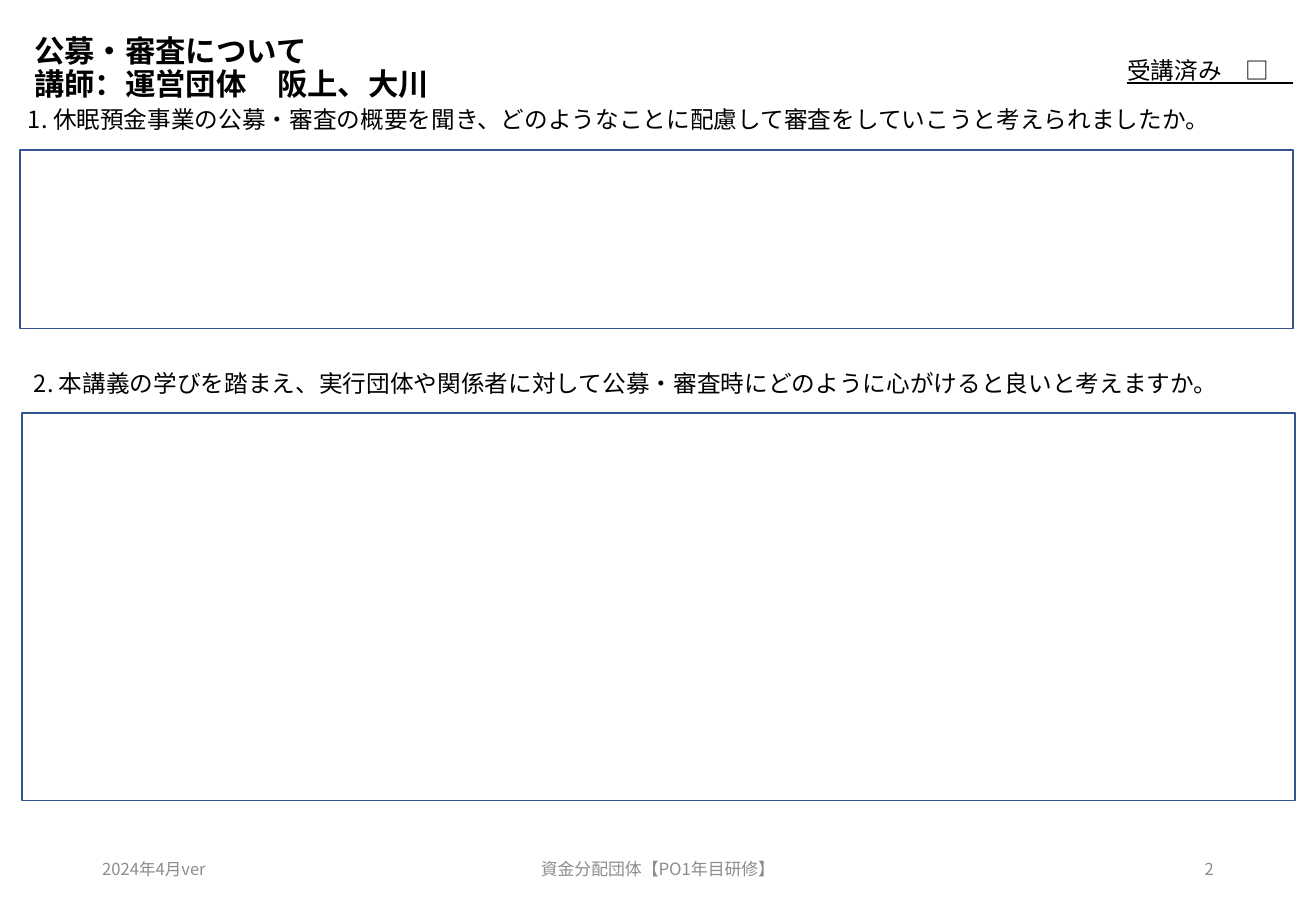
from dataclasses import dataclass

from pptx import Presentation
from pptx.dml.color import RGBColor
from pptx.enum.shapes import MSO_SHAPE
from pptx.enum.text import MSO_ANCHOR, MSO_AUTO_SIZE, PP_ALIGN
from pptx.oxml.ns import qn
from pptx.util import Pt


@dataclass(frozen=True)
class Theme:
    font: str = "Noto Sans CJK JP"
    ink: RGBColor = RGBColor(0x00, 0x00, 0x00)
    muted: RGBColor = RGBColor(0x8C, 0x8C, 0x8C)
    paper: RGBColor = RGBColor(0xFF, 0xFF, 0xFF)
    outline: RGBColor = RGBColor(0x32, 0x54, 0x91)
    title_size: float = 18
    body_size: float = 14
    footer_size: float = 10
    footer_side_size: float = 9.8


THEME = Theme()


def add_span(para, text, size, color=THEME.ink, bold=False, underline=False):
    span = para.add_run()
    span.text = text
    font = span.font
    font.name, font.size, font.bold = THEME.font, Pt(size), bold
    font.underline = underline
    font.color.rgb = color
    # East Asian characters take their own typeface entry
    latin = font._element.find(qn("a:latin"))
    east_asian = latin.makeelement(qn("a:ea"), {"typeface": THEME.font})
    latin.addnext(east_asian)


def add_text(page, box, text, size, color=THEME.ink, align=PP_ALIGN.LEFT,
             anchor=MSO_ANCHOR.TOP, underline=False):
    frame = page.shapes.add_textbox(*map(Pt, box)).text_frame
    frame.word_wrap = True
    frame.vertical_anchor = anchor
    para = frame.paragraphs[0]
    para.alignment = align
    add_span(para, text, size, color, underline=underline)


def add_title(page, box, lines):
    title = page.shapes.title
    title.left, title.top, title.width, title.height = map(Pt, box)
    frame = title.text_frame
    frame.auto_size = MSO_AUTO_SIZE.NONE
    frame.vertical_anchor = MSO_ANCHOR.MIDDLE
    para = frame.paragraphs[0]
    para.alignment = PP_ALIGN.LEFT
    para.line_spacing = 0.9
    for index, line in enumerate(lines):
        if index:
            para.add_line_break()
        add_span(para, line, THEME.title_size, bold=True)


def add_question(page, box, text, indent):
    """Place an answer frame in the box and its question just above it."""
    left, top, width, height = box
    answer = page.shapes.add_shape(MSO_SHAPE.RECTANGLE, *map(Pt, box))
    answer.shadow.inherit = False
    answer.fill.solid()
    answer.fill.fore_color.rgb = THEME.paper
    answer.line.color.rgb = THEME.outline
    answer.line.width = Pt(1)
    add_text(page, (left + indent, top - 30, width, 24.5), text, THEME.body_size)


def add_footer(page, box, date, label, number):
    left, top, width, height = box
    side, middle = 175.5, 263.5
    parts = [
        (left, side, date, THEME.footer_side_size, PP_ALIGN.LEFT),
        (left + (width - middle) / 2, middle, label, THEME.footer_size, PP_ALIGN.CENTER),
        (left + width - side, side, number, THEME.footer_side_size, PP_ALIGN.RIGHT),
    ]
    for start, part_width, text, size, align in parts:
        add_text(page, (start, top, part_width, height), text, size,
                 THEME.muted, align, MSO_ANCHOR.MIDDLE)


def main():
    deck = Presentation()
    deck.slide_width, deck.slide_height = Pt(780), Pt(540)
    page = deck.slides.add_slide(deck.slide_layouts[5])

    # Heading and attendance check
    add_title(page, (13, 10, 672.5, 62),
              ["公募・審査について", "講師：運営団体　阪上、大川"])
    add_text(page, (661, 29.5, 144.5, 24.5), "受講済み　□　",
             THEME.body_size, underline=True)

    # Questions with answer frames
    add_question(page, (12, 88.75, 754.5, 106),
                 "1. 休眠預金事業の公募・審査の概要を聞き、"
                 "どのようなことに配慮して審査をしていこうと考えられましたか。", -2.5)
    add_question(page, (13, 245, 754.5, 229.5),
                 "2. 本講義の学びを踏まえ、実行団体や関係者に対して"
                 "公募・審査時にどのように心がけると良いと考えますか。", 0)

    # Footer
    add_footer(page, (53.5, 500.5, 673, 28.75),
               "2024年4月ver", "資金分配団体【PO1年目研修】", "2")

    deck.save("out.pptx")


if __name__ == "__main__":
    main()
